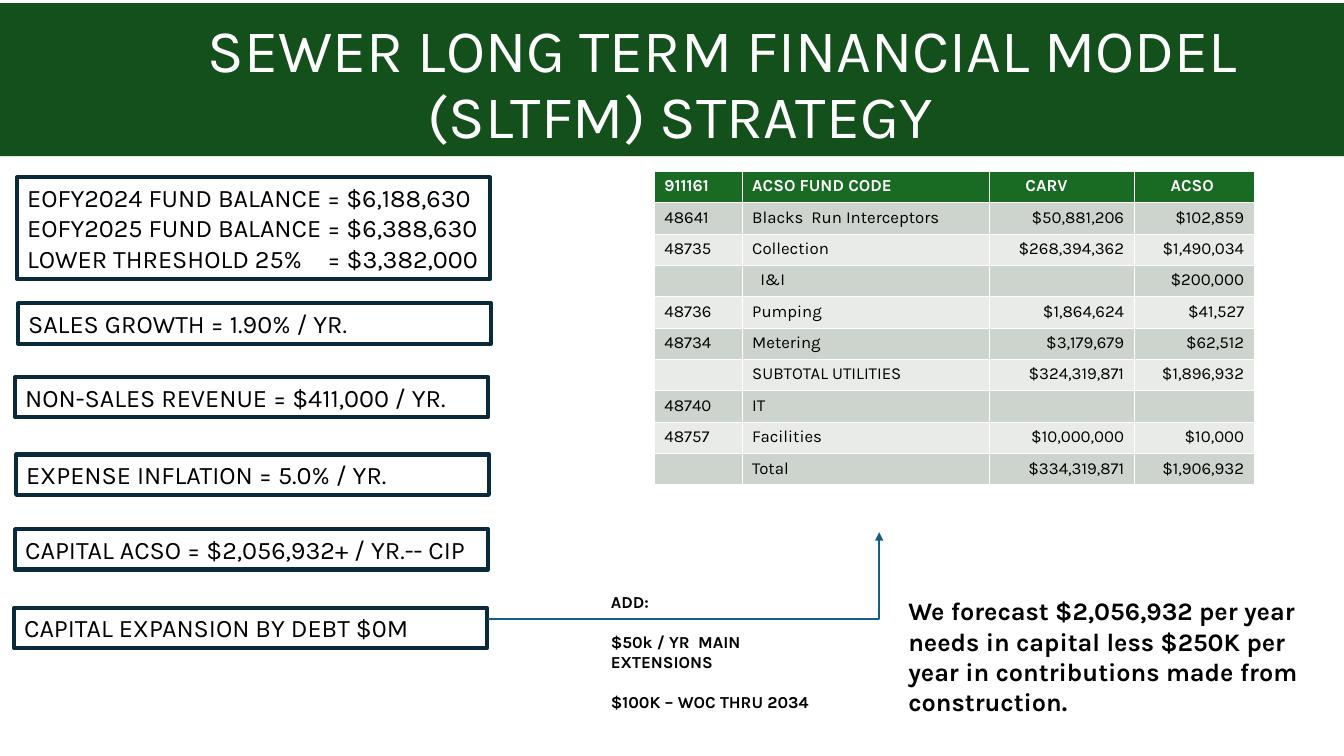
"""Builds the sewer long term financial model strategy slide."""
from dataclasses import dataclass

from lxml.etree import SubElement
from pptx import Presentation
from pptx.dml.color import RGBColor as Color
from pptx.enum.shapes import MSO_CONNECTOR as Connector, MSO_SHAPE as Shape
from pptx.enum.text import MSO_ANCHOR as Anchor, PP_ALIGN as Align
from pptx.oxml.ns import qn
from pptx.util import Inches, Pt


@dataclass(frozen=True)
class Theme:
    font: str = "Karla"
    banner: str = "13501B"
    header: str = "196B24"
    bands: tuple = ("E8EBE8", "CCD4CD")
    outline: str = "092A39"
    arrow: str = "156082"
    light: str = "FFFFFF"
    dark: str = "000000"
    title_size: float = 43.2
    body_size: int = 18
    small_size: int = 12


theme = Theme()
deck = Presentation()
deck.slide_width, deck.slide_height = Inches(13.33), Inches(7.5)
column, row = deck.slide_width / 100, deck.slide_height / 100
page = deck.slides.add_slide(deck.slide_layouts[5])


def place(left, top, width, height):
    """Turns percentages of the slide into lengths."""
    return [round(share * unit) for share, unit in
            zip((left, top, width, height), (column, row, column, row))]


def write(para, text, size, color=theme.dark, bold=False, align=Align.LEFT, indent=0):
    """Adds one formatted run to a paragraph."""
    span = para.add_run()
    span.text = text
    span.font.name, span.font.size, span.font.bold = theme.font, Pt(size), bold
    span.font.color.rgb = Color.from_string(color)
    para.alignment = align
    if indent:
        para._p.get_or_add_pPr().set("marL", str(round(indent * column)))
        para._p.get_or_add_pPr().set("indent", "0")


title = page.shapes.title
title.left, title.top, title.width, title.height = place(0, 0.4, 100, 20.27)
title.fill.solid()
title.fill.fore_color.rgb = Color.from_string(theme.banner)
frame = title.text_frame
frame.word_wrap, frame.vertical_anchor = True, Anchor.BOTTOM
title_lines = [("SEWER LONG TERM FINANCIAL MODEL", 7.5), ("(SLTFM) STRATEGY", 1.2)]
for number, (line, indent) in enumerate(title_lines):
    para = frame.add_paragraph() if number else frame.paragraphs[0]
    para.line_spacing = 0.9
    write(para, line, theme.title_size, theme.light, align=Align.CENTER, indent=indent)

assumptions = [
    (1.28, 23.47, 13.47, ["EOFY2024 FUND BALANCE = $6,188,630",
                          "EOFY2025 FUND BALANCE = $6,388,630",
                          "LOWER THRESHOLD 25%\t= $3,382,000"]),
    (1.35, 40.13, 5.33, ["SALES GROWTH = 1.90% / YR."]),
    (1.13, 49.87, 5.33, ["NON-SALES REVENUE = $411,000 / YR."]),
    (1.2, 60.13, 5.33, ["EXPENSE INFLATION = 5.0% / YR."]),
    (1.13, 70, 5.33, ["CAPITAL ACSO = $2,056,932+ / YR.-- CIP"]),
    (1.05, 80.4, 5.33, ["CAPITAL EXPANSION BY DEBT $0M"]),
]
for left, top, height, lines in assumptions:
    box = page.shapes.add_shape(Shape.RECTANGLE, *place(left, top, 35.18, height))
    box.shadow.inherit = False
    box.fill.background()
    box.line.color.rgb, box.line.width = Color.from_string(theme.outline), Pt(3)
    frame = box.text_frame
    frame.word_wrap, frame.vertical_anchor = True, Anchor.TOP
    for number, line in enumerate(lines):
        para = frame.add_paragraph() if number else frame.paragraphs[0]
        write(para, line, theme.body_size)
        if "\t" in line:
            stops = SubElement(para._p.get_or_add_pPr(), qn("a:tabLst"))
            SubElement(stops, qn("a:tab"), pos=str(round(22.35 * column)), algn="l")

funds = [
    ("911161", "ACSO FUND CODE", "CARV", "ACSO"),
    ("48641", "Blacks  Run Interceptors", "$50,881,206", "$102,859"),
    ("48735", "Collection", "$268,394,362", "$1,490,034"),
    ("", "I&I", "", "$200,000"),
    ("48736", "Pumping", "$1,864,624", "$41,527"),
    ("48734", "Metering", "$3,179,679", "$62,512"),
    ("", "SUBTOTAL UTILITIES", "$324,319,871", "$1,896,932"),
    ("48740", "IT", "", ""),
    ("48757", "Facilities", "$10,000,000", "$10,000"),
    ("", "Total", "$334,319,871", "$1,906,932"),
]
indents = {"CARV": 1.95, "ACSO": 1.95, "I&I": 0.6}
table = page.shapes.add_table(len(funds), 4, *place(48.69, 22.67, 44.64, 41.47)).table
for table_column, share in zip(table.columns, (6.53, 18.38, 10.8, 8.93)):
    table_column.width = round(share * column)
for line, values in enumerate(funds):
    heading = line == 0
    for place_in_row, value in enumerate(values):
        cell = table.cell(line, place_in_row)
        cell.fill.solid()
        cell.fill.fore_color.rgb = Color.from_string(
            theme.header if heading else theme.bands[line % 2])
        para = cell.text_frame.paragraphs[0]
        if value:
            write(para, value, theme.small_size, theme.light if heading else theme.dark, heading,
                  Align.RIGHT if place_in_row > 1 and not heading else Align.LEFT,
                  indents.get(value, 0))
        else:
            SubElement(para._p, qn("a:endParaRPr"), sz=str(theme.small_size * 100))

start_x, start_y, end_x, end_y = place(36.31, 81.87, 65.42, 70.4)
arrow = page.shapes.add_connector(Connector.ELBOW, start_x, start_y, end_x, end_y)
arrow.line.color.rgb, arrow.line.width = Color.from_string(theme.arrow), Pt(1.5)
SubElement(arrow.line._get_or_add_ln(), qn("a:tailEnd"), type="triangle")
properties = arrow._element.spPr
SubElement(properties, qn("a:effectLst"))
bends = properties.find(qn("a:prstGeom")).find(qn("a:avLst"))
SubElement(bends, qn("a:gd"), name="adj1", fmla="val 100000")

notes = [
    ((44.71, 77.6, 18.53, 20.13), theme.small_size,
     ["ADD:", "$50k / YR  MAIN EXTENSIONS", "$100K – WOC THRU 2034"]),
    ((66.84, 78.13, 31.21, 17.47), theme.body_size,
     ["We forecast $2,056,932 per year needs in capital less $250K per year "
      "in contributions made from construction."]),
]
for area, size, lines in notes:
    frame = page.shapes.add_textbox(*place(*area)).text_frame
    frame.word_wrap = True
    for number, line in enumerate(lines):
        para = frame.add_paragraph() if number else frame.paragraphs[0]
        para.space_before = Pt(14 if number else 0)
        write(para, line, size, bold=True)

deck.save("out.pptx")
